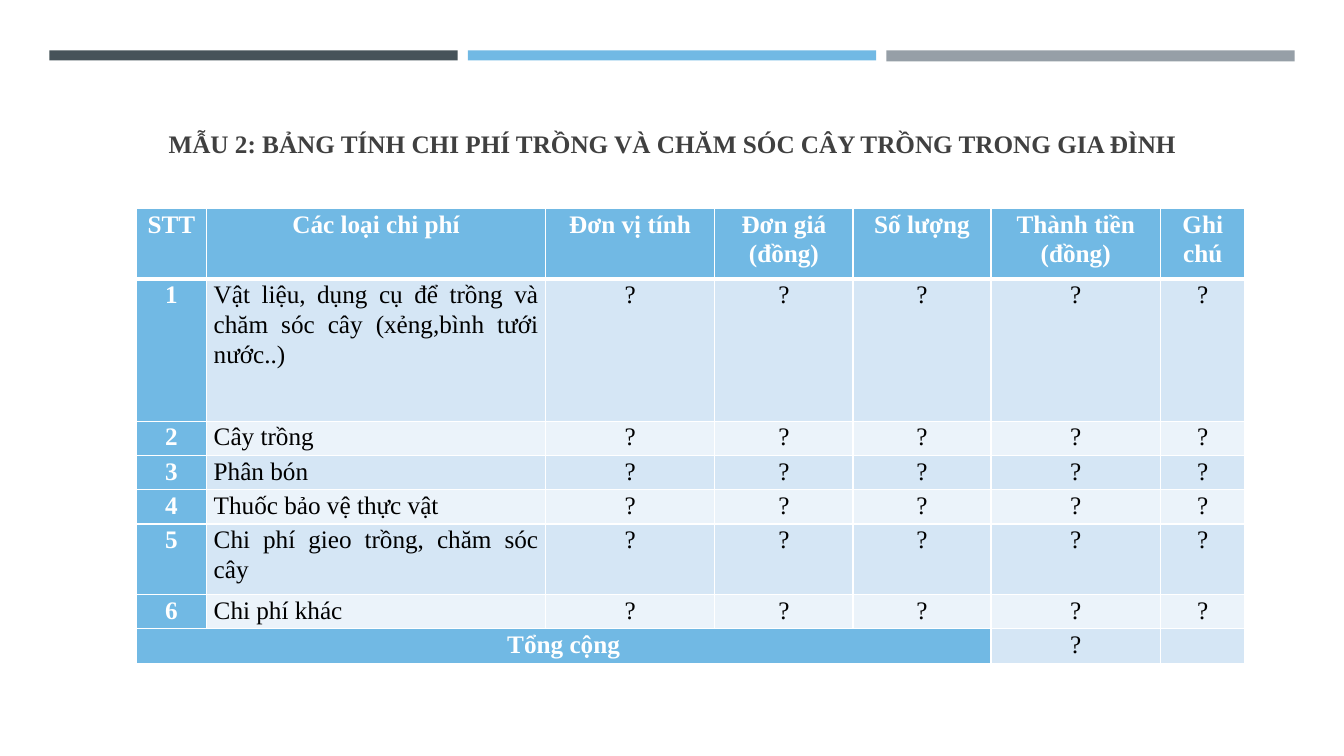
from typing import NamedTuple

from lxml.etree import SubElement
from pptx import Presentation
from pptx.dml.color import RGBColor
from pptx.enum.shapes import MSO_SHAPE
from pptx.enum.text import MSO_ANCHOR, MSO_AUTO_SIZE, PP_ALIGN
from pptx.oxml.ns import qn
from pptx.util import Inches, Pt

SLATE = RGBColor(0x46, 0x53, 0x59)
SKY = RGBColor(0x71, 0xB9, 0xE4)
GRAY = RGBColor(0x96, 0x9F, 0xA7)
DARK = RGBColor(0x40, 0x40, 0x40)
BLACK = RGBColor(0x00, 0x00, 0x00)
WHITE = RGBColor(0xFF, 0xFF, 0xFF)
BAND_DARK = RGBColor(0xD5, 0xE6, 0xF5)
BAND_LIGHT = RGBColor(0xEB, 0xF3, 0xFA)

FONT = "Times New Roman"
TITLE = "MẪU 2: BẢNG TÍNH CHI PHÍ TRỒNG VÀ CHĂM SÓC CÂY TRỒNG TRONG GIA ĐÌNH"
HEADINGS = ["STT", "Các loại chi phí", "Đơn vị tính", "Đơn giá (đồng)",
            "Số lượng", "Thành tiền (đồng)", "Ghi chú"]
COSTS = ["Vật liệu, dụng cụ để trồng và chăm sóc cây (xẻng,bình tưới nước..)",
         "Cây trồng", "Phân bón", "Thuốc bảo vệ thực vật",
         "Chi phí gieo trồng, chăm sóc cây", "Chi phí khác"]
COLUMN_WIDTHS = [0.7, 3.36, 1.68, 1.37, 1.37, 1.68, 0.84]
ROW_HEIGHTS = [0.7, 1.41, 0.34, 0.34, 0.34, 0.7, 0.34, 0.34]
TOTAL_SPAN = 5


class Bar(NamedTuple):
    left: float
    height: float
    color: RGBColor


BARS = [Bar(0.49, 0.1, SLATE), Bar(4.64, 0.1, SKY), Bar(8.79, 0.11, GRAY)]


def write(frame, text: str, *, color: RGBColor = BLACK, bold: bool = False,
          align: PP_ALIGN = PP_ALIGN.CENTER, spacing: float = 1.07,
          after: float = 6) -> None:
    paragraph = frame.paragraphs[0]
    paragraph.alignment = align
    paragraph.line_spacing = spacing
    paragraph.space_before = Pt(0)
    paragraph.space_after = Pt(after)
    run = paragraph.add_run()
    run.text = text
    run.font.name = FONT
    run.font.size = Pt(18)
    run.font.bold = bold
    run.font.color.rgb = color


def draw_bar(slide, bar: Bar) -> None:
    strip = slide.shapes.add_shape(MSO_SHAPE.RECTANGLE, Inches(bar.left), Inches(0.5),
                                   Inches(4.05), Inches(bar.height))
    strip.shadow.inherit = False
    strip.fill.solid()
    strip.fill.fore_color.rgb = bar.color
    strip.line.fill.background()


def set_borders(cell, top: float, bottom: float) -> None:
    properties = cell._tc.get_or_add_tcPr()
    for side, width in (("L", 1), ("R", 1), ("T", top), ("B", bottom)):
        line = SubElement(properties, qn(f"a:ln{side}"), w=str(Pt(width)))
        fill = SubElement(line, qn("a:solidFill"))
        SubElement(fill, qn("a:srgbClr"), val=str(WHITE))


def style_cell(cell, row: int, fill: RGBColor) -> None:
    cell.margin_left = cell.margin_right = Inches(0.07)
    cell.margin_top = cell.margin_bottom = 0
    set_borders(cell, top=3 if row == 1 else 1, bottom=3 if row == 0 else 1)
    cell.fill.solid()
    cell.fill.fore_color.rgb = fill


def draw_cost_table(slide) -> None:
    numbered = [[str(n), cost] + ["?"] * 5 for n, cost in enumerate(COSTS, 1)]
    total = ["Tổng cộng"] + [""] * (TOTAL_SPAN - 1) + ["?", ""]
    rows = [HEADINGS, *numbered, total]
    last = len(rows) - 1

    table = slide.shapes.add_table(len(rows), len(HEADINGS), Inches(1.35), Inches(2.07),
                                   Inches(11), Inches(4.51)).table
    for column, width in zip(table.columns, COLUMN_WIDTHS):
        column.width = Inches(width)
    for row, height in zip(table.rows, ROW_HEIGHTS):
        row.height = Inches(height)
    table.cell(last, 0).merge(table.cell(last, TOTAL_SPAN - 1))

    for r, texts in enumerate(rows):
        band = BAND_DARK if r % 2 else BAND_LIGHT
        for c, text in enumerate(texts):
            cell = table.cell(r, c)
            heading = r == 0 or c == 0 or (r == last and c < TOTAL_SPAN)
            style_cell(cell, r, SKY if heading else band)
            if text:
                is_cost = c == 1 and not heading
                write(cell.text_frame, text, bold=heading,
                      color=WHITE if heading else BLACK,
                      align=PP_ALIGN.JUSTIFY if is_cost else PP_ALIGN.CENTER)


def main() -> None:
    deck = Presentation()
    deck.slide_width, deck.slide_height = Inches(13.33), Inches(7.5)
    slide = deck.slides.add_slide(deck.slide_layouts[5])

    # Top bars
    for bar in BARS:
        draw_bar(slide, bar)

    # Title
    title = slide.shapes.title
    title.left, title.top = Inches(0.64), Inches(0.77)
    title.width, title.height = Inches(12.06), Inches(1.3)
    heading = title.text_frame
    heading.auto_size = MSO_AUTO_SIZE.NONE
    heading.word_wrap = True
    heading.vertical_anchor = MSO_ANCHOR.BOTTOM
    heading.margin_bottom = Inches(0.5)
    write(heading, TITLE, color=DARK, bold=True, spacing=1, after=0)

    # Cost table
    draw_cost_table(slide)

    deck.save("out.pptx")


if __name__ == "__main__":
    main()
